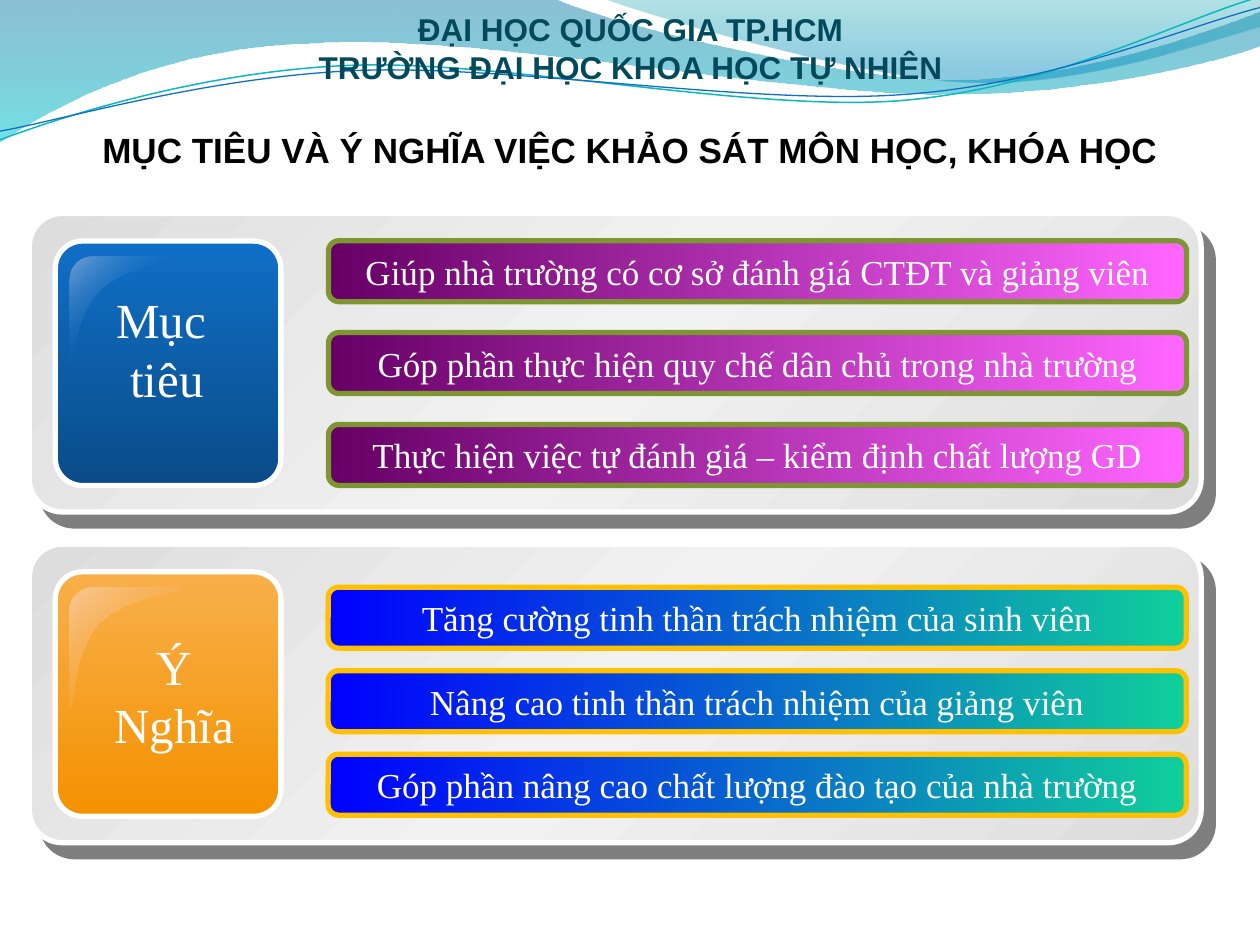
from lxml import etree
from pptx import Presentation
from pptx.dml.color import RGBColor
from pptx.enum.shapes import MSO_SHAPE
from pptx.enum.text import MSO_ANCHOR, PP_ALIGN
from pptx.oxml.ns import qn
from pptx.util import Pt

ROUND = MSO_SHAPE.ROUNDED_RECTANGLE
DIAGONAL = MSO_SHAPE.ROUND_2_DIAG_RECTANGLE
MIDDLE, TOP = MSO_ANCHOR.MIDDLE, MSO_ANCHOR.TOP
CENTER = PP_ALIGN.CENTER
SANS, SERIF = "Arial", "Times New Roman"

# Content
HEADER = ["ĐẠI HỌC QUỐC GIA TP.HCM", "TRƯỜNG ĐẠI HỌC KHOA HỌC TỰ NHIÊN"]
TITLE = "MỤC TIÊU VÀ Ý NGHĨA VIỆC KHẢO SÁT MÔN HỌC, KHÓA HỌC"
# Gradients are lists of (position, colour, opacity), in percent
SECTIONS = [
    dict(label=["Mục ", "tiêu"], label_box=(58.7, 162, 73.5, 75), top=122,
         card=[(0, "0F6FC6", 100), (100, "0A4C88", 100)],
         sheen=[(0, "B5C2E2", 60), (50, "0F6FC6", 0), (100, "0F6FC6", 0)],
         bars=["Giúp nhà trường có cơ sở đánh giá CTĐT và giảng viên",
               "Góp phần thực hiện quy chế dân chủ trong nhà trường",
               "Thực hiện việc tự đánh giá – kiểm định chất lượng GD"],
         bar_fill=[(0, "660066", 100), (100, "FF66FF", 100)],
         bar_line="7E9632", bar_left=187.7, bar_top=137.6, bar_step=52.5),
    dict(label=["Ý", "Nghĩa"], label_box=(57.8, 360, 83.5, 75), top=311,
         card=[(0, "F8B04B", 100), (100, "F49100", 100)],
         sheen=[(0, "FAD9C9", 60), (100, "F49100", 0)],
         bars=["Tăng cường tinh thần trách nhiệm của sinh viên",
               "Nâng cao tinh thần trách nhiệm của giảng viên",
               "Góp phần nâng cao chất lượng đào tạo của nhà trường"],
         bar_fill=[(0, "0000FF", 100), (100, "10CF9B", 100)],
         bar_line="FFC000", bar_left=187.5, bar_top=335.6, bar_step=47.7),
]

# Outlines: a start point, then (x, y) lines or six-number Bezier curves
WAVES = [
    ([(0, 0), (317, -0.7), (342.7, 12.2, 478.1, 45.4, 545.8, 45.4),
      (614.2, 45.4, 689.8, 18.7, 720, 6.5), (720.7, 25.9),
      (707.8, 31.7, 626.4, 54.7, 537.1, 54), (447.8, 54, 275, 20.2, 185, 24.5),
      (92.9, 25.9, 33.1, 59.8, -0.7, 81.4)],
     [(0, "0074A1", 45), (100, "00C6CF", 55)]),
    ([(344.9, -0.7), (366.5, 7.9, 491, 44.6, 553.7, 46.8),
      (616.3, 49.7, 691.9, 23, 720, 15.1), (720, 0)],
     [(0, "00A1A9", 30), (80, "008BBF", 45)]),
]
STRANDS = [
    ([(0, 79.9), (34.6, 67, 113.8, 41, 199.4, 37.4),
      (284.4, 33.8, 427, 64.1, 513.4, 57.6),
      (599.8, 51.1, 675.4, 10.8, 718.6, -1.4)], "0AB8BF", 0.85),
    ([(0, 74.9), (33.8, 69.1, 118.1, 43.9, 203.8, 40.3),
      (290.2, 36.7, 429.8, 60.5, 516.2, 54),
      (601.9, 48.2, 677.5, 15.1, 720, 4.3)], "0F6FC6", 0.75),
]
SHEEN = [(13, 0), (5.8, 0, 0, 5.8, 0, 13.7), (0, 68.4),
         (2.9, 69.8, 1.4, 36, 17.3, 20.2), (33.1, 4.3, 64, 2.9, 63.4, 0)]
PANEL_FILL = [(0, "DDDDDD", 100), (50, "F2F2F2", 100), (100, "DDDDDD", 100)]


def rgb(code):
    return RGBColor.from_string(code)


def set_gradient(sp, stops, angle):
    sp.fill.gradient()
    sp.fill.gradient_angle = (360 - angle) % 360
    stop_list = next(sp._element.spPr.iter(qn("a:gsLst")))
    for old in list(stop_list):
        stop_list.remove(old)
    for pos, code, opacity in stops:
        gs = etree.SubElement(stop_list, qn("a:gs"), pos=str(pos * 1000))
        clr = etree.SubElement(gs, qn("a:srgbClr"), val=code)
        if opacity < 100:
            etree.SubElement(clr, qn("a:alpha"), val=str(opacity * 1000))


def set_line(sp, code, width):
    sp.line.color.rgb = rgb(code)
    sp.line.width = Pt(width)


def add_drop_shadow(sp):
    effects = sp._element.spPr.find(qn("a:effectLst"))
    shadow = etree.SubElement(effects, qn("a:outerShdw"), blurRad="0",
                              dist=str(Pt(10.6)), dir=str(49 * 60000),
                              algn="ctr", rotWithShape="0")
    clr = etree.SubElement(shadow, qn("a:srgbClr"), val="000000")
    etree.SubElement(clr, qn("a:alpha"), val="50000")


def set_text(sp, lines, font, size, code, bold=False, anchor=MIDDLE, wrap=True):
    tf = sp.text_frame
    tf.word_wrap = wrap
    tf.vertical_anchor = anchor
    for i, line in enumerate(lines):
        p = tf.paragraphs[0] if i == 0 else tf.add_paragraph()
        p.text = line
        p.alignment = CENTER
        p.font.name, p.font.size, p.font.bold = font, Pt(size), bold
        p.font.color.rgb = rgb(code)


def add_round_box(box, radius, stops, angle, line_code):
    sp = s.shapes.add_shape(ROUND, *map(Pt, box))
    sp.shadow.inherit = False
    sp.adjustments[0] = radius
    set_gradient(sp, stops, angle)
    set_line(sp, line_code, 3)
    return sp


def add_outline(steps, dx=0, dy=0, close=True):
    """Build a freeform, then join the three points of each curve."""
    points = [(Pt(step[i] + dx), Pt(step[i + 1] + dy))
              for step in steps for i in range(0, len(step), 2)]
    builder = s.shapes.build_freeform(*points[0])
    builder.add_line_segments(points[1:], close=close)
    sp = builder.convert_to_shape()
    sp.shadow.inherit = False
    segments = iter(list(sp._element.spPr.iter(qn("a:lnTo"))))
    for step in steps[1:]:
        parts = [next(segments) for _ in range(len(step) // 2)]
        if len(parts) == 3:
            curve = etree.Element(qn("a:cubicBezTo"))
            parts[0].addprevious(curve)
            for part in parts:
                curve.append(part[0])
                part.getparent().remove(part)
    return sp


prs = Presentation()
prs.slide_width, prs.slide_height = Pt(720), Pt(540)
s = prs.slides.add_slide(prs.slide_layouts[5])

# White page area, with the waves above it
page = s.shapes.add_shape(DIAGONAL, Pt(0.7), Pt(60.5), Pt(719.3), Pt(479.5))
page.shadow.inherit = False
page.fill.solid()
page.fill.fore_color.rgb = rgb("FFFFFF")
page.line.fill.background()
for steps, stops in WAVES:
    sp = add_outline(steps)
    set_gradient(sp, stops, 90)
    sp.line.fill.background()
for steps, code, width in STRANDS:
    sp = add_outline(steps, close=False)
    sp.fill.background()
    set_line(sp, code, width)

# School header and title, the title brought in front of the page area
header = s.shapes.add_textbox(Pt(0.7), Pt(0), Pt(719.3), Pt(54.7))
set_text(header, HEADER, SANS, 18, "03495C", bold=True)
title = s.shapes.title
title.left, title.top, title.width, title.height = map(Pt, (0, 69.8, 720, 31.5))
set_text(title, [TITLE], SANS, 20, "000000", bold=True, anchor=TOP)
header._element.addnext(title._element)

# Two panels, each with a label card and three bars
for sec in SECTIONS:
    top = sec["top"]
    panel = add_round_box((16.8, top, 669.6, 170.6), 0.11, PANEL_FILL, 45, "FFFFFF")
    add_drop_shadow(panel)
    add_round_box((31.6, top + 15.8, 128.9, 139.7), 0.12, sec["card"], 90, "FFFFFF")
    sheen = add_outline(SHEEN, 39.6, top + 24.7)
    set_gradient(sheen, sec["sheen"], 45)
    sheen.line.fill.background()
    label = s.shapes.add_textbox(*map(Pt, sec["label_box"]))
    set_text(label, sec["label"], SERIF, 28, "FFFFFF", anchor=TOP, wrap=False)
    for i, text in enumerate(sec["bars"]):
        y = sec["bar_top"] + i * sec["bar_step"]
        bar = add_round_box((sec["bar_left"], y, 490.3, 34.8), 0.17,
                            sec["bar_fill"], 0, sec["bar_line"])
        set_text(bar, [text], SERIF, 20, "FFFFFF")

prs.save("out.pptx")
